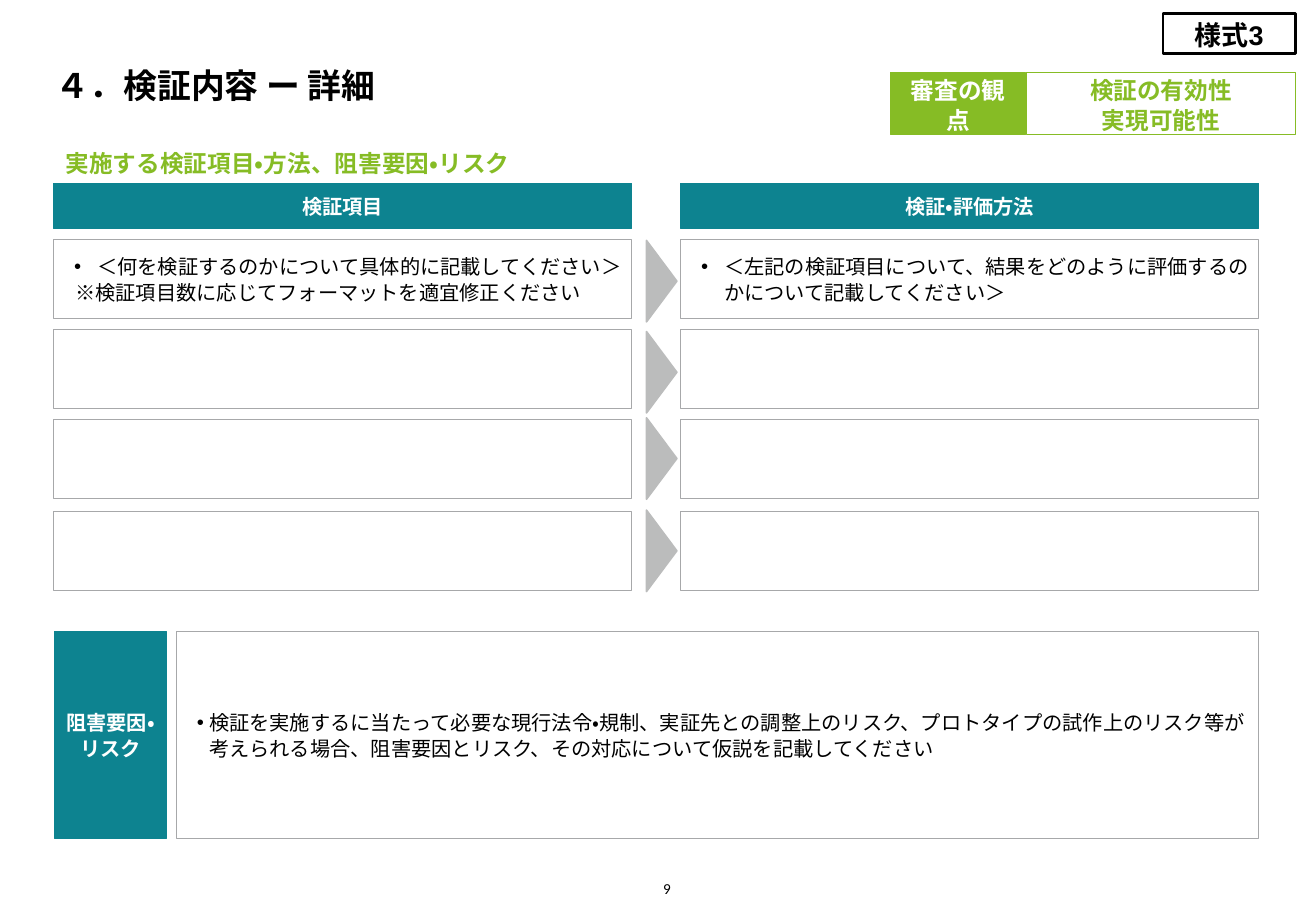
from dataclasses import dataclass

from lxml import etree
from pptx import Presentation
from pptx.dml.color import RGBColor
from pptx.enum import lang, shapes, text
from pptx.oxml.ns import qn
from pptx.util import Pt

PX = 9144  # EMU per px, 100 px to the inch


@dataclass(frozen=True)
class Theme:
    black: str = "000000"
    white: str = "FFFFFF"
    green: str = "86BC25"
    teal: str = "0D8390"
    border: str = "A7A8AA"
    arrow: str = "BBBCBC"
    body_font: str = "Arial"
    title_font: str = "Calibri"
    title: int = 20
    form: int = 16
    heading: int = 14
    body: int = 12
    page: int = 9


theme = Theme()
RECTANGLE = shapes.MSO_SHAPE.RECTANGLE
TRIANGLE = shapes.MSO_SHAPE.ISOSCELES_TRIANGLE
LEFT, CENTER, RIGHT = text.PP_ALIGN.LEFT, text.PP_ALIGN.CENTER, text.PP_ALIGN.RIGHT
MIDDLE, BOTTOM = text.MSO_ANCHOR.MIDDLE, text.MSO_ANCHOR.BOTTOM


def add_box(parent, left, top, width, height, fill, line, weight=0.5, kind=RECTANGLE):
    shape = parent.add_shape(kind, left * PX, top * PX, width * PX, height * PX)
    shape.shadow.inherit = False
    shape.fill.solid()
    shape.fill.fore_color.rgb = RGBColor.from_string(fill)
    shape.line.color.rgb = RGBColor.from_string(line)
    shape.line.width = Pt(weight)
    return shape


def write(shape, lines, size, color, bold=True, font=theme.body_font, align=CENTER,
          anchor=MIDDLE, insets=(8, 8, 8, 8), spacing=1.06):
    """Each line is (text, left indent, first-line indent, bullet, font) or plain text."""
    frame = shape.text_frame
    frame.word_wrap = True
    frame.auto_size = text.MSO_AUTO_SIZE.NONE
    frame.vertical_anchor = anchor
    frame.margin_left, frame.margin_top, frame.margin_right, frame.margin_bottom = (
        inset * PX for inset in insets)
    for index, line in enumerate(lines):
        words, margin, indent, bullet, face = (
            (line, 0, 0, None, font) if isinstance(line, str) else line)
        paragraph = frame.add_paragraph() if index else frame.paragraphs[0]
        properties = paragraph._p.get_or_add_pPr()
        properties.set("marL", str(margin * PX))
        properties.set("indent", str(indent * PX))
        if bullet:
            etree.SubElement(properties, qn("a:buFont")).set("typeface", theme.body_font)
            etree.SubElement(properties, qn("a:buChar")).set("char", bullet)
        paragraph.alignment = align
        paragraph.line_spacing = spacing
        run = paragraph.add_run()
        run.text = words
        run.font.name = face
        run.font.size = Pt(size)
        run.font.bold = bold
        run.font.color.rgb = RGBColor.from_string(color)
        run.font.language_id = lang.MSO_LANGUAGE_ID.JAPANESE


presentation = Presentation()
presentation.slide_width = 1083 * PX
presentation.slide_height = 750 * PX
slide = presentation.slides.add_slide(presentation.slide_layouts[5])

# Title
title = slide.shapes.title
title.left, title.top, title.width, title.height = 46 * PX, 20 * PX, 992 * PX, 67 * PX
write(title, ["４．検証内容 ー 詳細"], theme.title, theme.black, font=theme.title_font,
      align=LEFT, anchor=BOTTOM, insets=(0, 0, 0, 0), spacing=1.0)

# Section heading and page number
heading = slide.shapes.add_textbox(46 * PX, 111 * PX, 476 * PX, 47 * PX)
write(heading, ["実施する検証項目・方法、阻害要因・リスク"], theme.heading, theme.green,
      font=theme.title_font, align=LEFT, insets=(8, 0, 0, 0), spacing=1.0)
page = slide.shapes.add_textbox(532 * PX, 720 * PX, 20 * PX, 19 * PX)
write(page, ["9"], theme.page, theme.black, bold=False, font=theme.title_font,
      align=RIGHT, anchor=BOTTOM, insets=(0, 0, 0, 0), spacing=1.0)

# Form label
form = add_box(slide.shapes, 957, 11, 109, 33, theme.white, theme.black, 1.5)
write(form, ["様式3"], theme.form, theme.black)

# Review criteria
criteria = slide.shapes.add_group_shape().shapes
criteria_values = add_box(criteria, 845, 60, 221, 51, theme.white, theme.green)
write(criteria_values, ["検証の有効性", "実現可能性"], theme.heading, theme.green)
criteria_label = add_box(criteria, 733, 60, 111, 51, theme.green, theme.green)
write(criteria_label, ["審査の観点"], theme.heading, theme.white)

# Verification columns: header, then one box per row
columns = [
    (44, "検証項目", [
        ("＜何を検証するのかについて具体的に記載してください＞", 28, -19, "•", theme.body_font),
        ("※検証項目数に応じてフォーマットを適宜修正ください", 10, 0, None, theme.title_font)]),
    (560, "検証・評価方法", [
        ("＜左記の検証項目について、結果をどのように評価するのかについて記載してください＞",
         28, -19, "•", theme.body_font)]),
]
row_tops = [197, 271, 345, 421]
for left, name, guidance in columns:
    header = add_box(slide.shapes, left, 151, 476, 37, theme.teal, theme.teal)
    write(header, [name], theme.body, theme.white)
    for top in row_tops:
        box = add_box(slide.shapes, left, top, 476, 65, theme.white, theme.border)
        if top == row_tops[0]:
            write(box, guidance, theme.body, theme.black, bold=False, align=LEFT)

# Arrows from item to method
for top in [219, 294, 365, 441]:
    arrow = add_box(slide.shapes, 511, top, 67, 25, theme.arrow, theme.arrow, 1, TRIANGLE)
    arrow.rotation = 90

# Obstacles and risks
risk_label = add_box(slide.shapes, 45, 520, 92, 170, theme.teal, theme.teal)
write(risk_label, ["阻害要因・リスク"], theme.body, theme.white)
risk_text = add_box(slide.shapes, 145, 520, 891, 170, theme.white, theme.border)
write(risk_text, [
    ("検証を実施するに当たって必要な現行法令・規制、実証先との調整上のリスク、"
     "プロトタイプの試作上のリスク等が考えられる場合、阻害要因とリスク、"
     "その対応について仮説を記載してください", 19, -10, "•", theme.body_font),
], theme.body, theme.black, bold=False, align=LEFT)

presentation.save("out.pptx")
